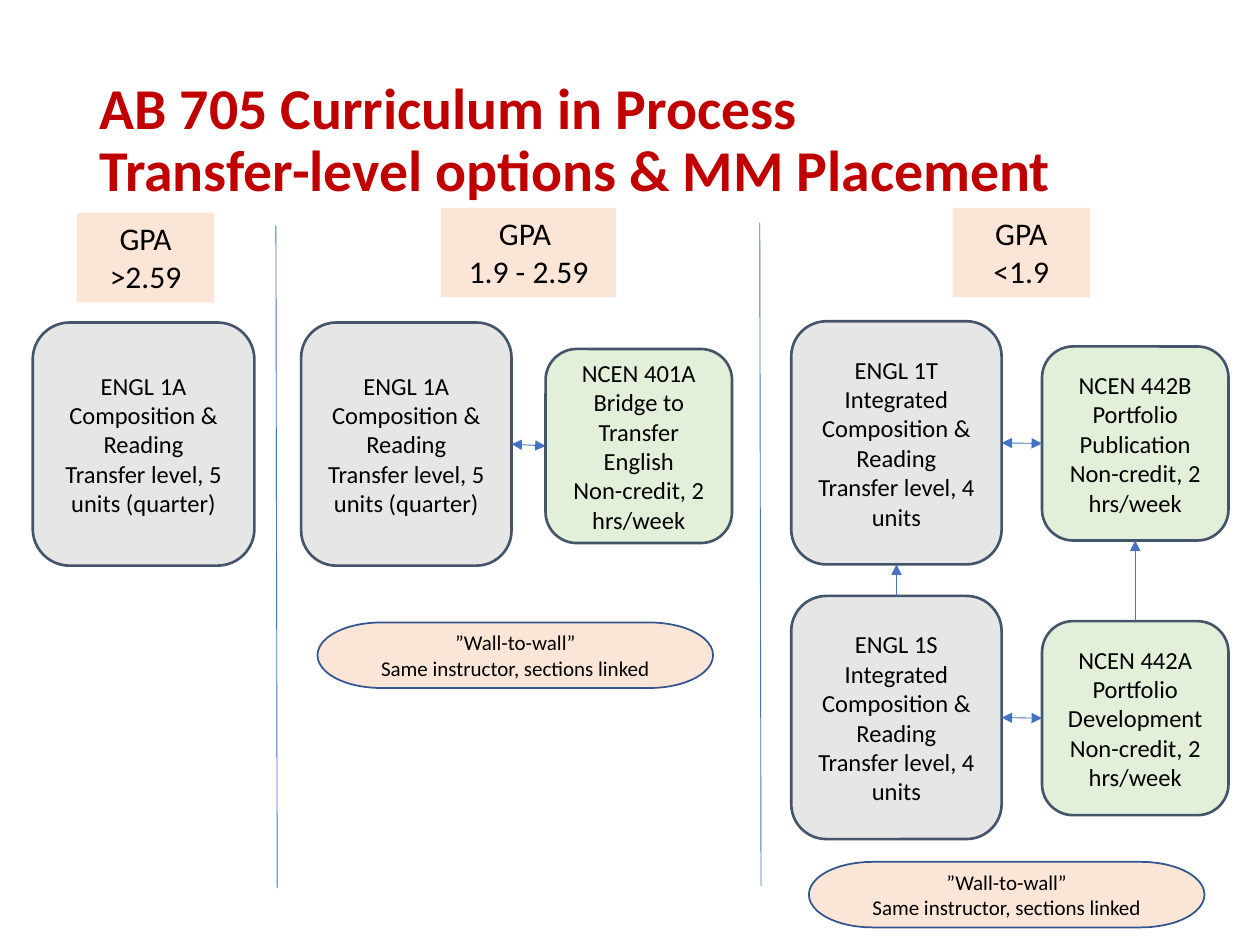
import dataclasses

import lxml.etree
import pptx
import pptx.dml.color
import pptx.enum.shapes
import pptx.enum.text
import pptx.oxml.ns
import pptx.util

EMU_PER_PX = 9144  # 100 px to the inch
FONT = "Calibri"
BLACK, RED, BLUE = "000000", "C00000", "4472C4"
GREY, GREEN, PEACH = "E7E6E6", "E2F0D9", "FBE5D6"
CARD_LINE, NOTE_LINE = "44546A", "325491"
TOP, LEFT, BOTTOM, RIGHT = range(4)  # connection sites of a card

SHAPES = pptx.enum.shapes.MSO_SHAPE
ALIGN = pptx.enum.text.PP_ALIGN
ANCHOR = pptx.enum.text.MSO_ANCHOR


@dataclasses.dataclass
class Box:
    left: int
    top: int
    width: int
    height: int
    lines: list[str]


@dataclasses.dataclass
class Style:
    preset: int
    fill: str
    size: int
    line: str | None = None
    line_width: float = 0
    anchor: int = ANCHOR.MIDDLE
    vertical_inset: int = 5


@dataclasses.dataclass
class Arrow:
    start: str
    start_site: int
    end: str
    end_site: int
    both_ways: bool


CREDIT = Style(SHAPES.ROUNDED_RECTANGLE, GREY, 14, CARD_LINE, 1.5, vertical_inset=10)
NON_CREDIT = dataclasses.replace(CREDIT, fill=GREEN)
GPA = Style(SHAPES.RECTANGLE, PEACH, 18, anchor=ANCHOR.TOP)
NOTE = Style(SHAPES.FLOWCHART_TERMINATOR, PEACH, 12, NOTE_LINE, 1)

TITLE_LINES = ["AB 705 Curriculum in Process", "Transfer-level options & MM Placement"]
COMPOSITION = ["ENGL 1A", "Composition & Reading", "Transfer level, 5 units (quarter)"]
INTEGRATED = ["Integrated Composition & Reading", "Transfer level, 4 units"]
HOURS = "Non-credit, 2 hrs/week"
WALL_TO_WALL = ["”Wall-to-wall”", "Same instructor, sections linked"]

DIVIDERS = [(219, 179, 220, 705), (603, 177, 604, 703)]

CARDS = {
    "1A high": (CREDIT, Box(26, 256, 176, 193, COMPOSITION)),
    "1A middle": (CREDIT, Box(239, 256, 167, 193, COMPOSITION)),
    "401A": (NON_CREDIT, Box(433, 277, 148, 154,
                             ["NCEN 401A", "Bridge to Transfer English", HOURS])),
    "1T": (CREDIT, Box(628, 255, 167, 193, ["ENGL 1T", *INTEGRATED])),
    "442B": (NON_CREDIT, Box(827, 275, 148, 154,
                             ["NCEN 442B", "Portfolio Publication", HOURS])),
    "1S": (CREDIT, Box(628, 473, 167, 193, ["ENGL 1S", *INTEGRATED])),
    "442A": (NON_CREDIT, Box(827, 493, 148, 154,
                             ["NCEN 442A", "Portfolio Development", HOURS])),
}

ARROWS = [
    Arrow("1A middle", RIGHT, "401A", LEFT, True),
    Arrow("1T", RIGHT, "442B", LEFT, True),
    Arrow("1S", RIGHT, "442A", LEFT, True),
    Arrow("1S", TOP, "1T", BOTTOM, False),
    Arrow("442A", TOP, "442B", BOTTOM, False),
]

GPA_LABELS = [
    Box(61, 169, 109, 71, ["GPA >2.59"]),
    Box(350, 165, 139, 71, ["GPA ", "1.9 - 2.59"]),
    Box(756, 165, 109, 71, ["GPA <1.9"]),
]

NOTES = [Box(252, 494, 314, 52, WALL_TO_WALL), Box(642, 684, 314, 52, WALL_TO_WALL)]


def px(length: int) -> pptx.util.Emu:
    return pptx.util.Emu(length * EMU_PER_PX)


def color(value: str) -> pptx.dml.color.RGBColor:
    return pptx.dml.color.RGBColor.from_string(value)


def add_run(paragraph, text: str, size: int, text_color: str, bold: bool = False) -> None:
    run = paragraph.add_run()
    run.text = text
    run.font.name = FONT
    run.font.size = pptx.util.Pt(size)
    run.font.bold = bold
    run.font.color.rgb = color(text_color)


def write_title(slide) -> None:
    title = slide.shapes.title
    title.left, title.top, title.width, title.height = map(px, (69, 40, 862, 145))
    frame = title.text_frame
    frame.word_wrap = True
    frame.auto_size = pptx.enum.text.MSO_AUTO_SIZE.NONE
    frame.vertical_anchor = ANCHOR.MIDDLE
    paragraph = frame.paragraphs[0]
    paragraph.alignment = ALIGN.LEFT
    paragraph.line_spacing = 0.9
    for index, line in enumerate(TITLE_LINES):
        if index:
            paragraph.add_line_break()
        add_run(paragraph, line, 33, RED, bold=True)


def add_box(slide, box: Box, style: Style):
    shape = slide.shapes.add_shape(
        style.preset, px(box.left), px(box.top), px(box.width), px(box.height))
    shape.shadow.inherit = False
    shape.fill.solid()
    shape.fill.fore_color.rgb = color(style.fill)
    if style.line:
        shape.line.color.rgb = color(style.line)
        shape.line.width = pptx.util.Pt(style.line_width)
    else:
        shape.line.fill.background()
    frame = shape.text_frame
    frame.word_wrap = True
    frame.vertical_anchor = style.anchor
    frame.margin_left = frame.margin_right = px(10)
    frame.margin_top = frame.margin_bottom = px(style.vertical_inset)
    for index, line in enumerate(box.lines):
        paragraph = frame.add_paragraph() if index else frame.paragraphs[0]
        paragraph.alignment = ALIGN.CENTER
        add_run(paragraph, line, style.size, BLACK)
    return shape


def add_line(slide, start_x: int, start_y: int, end_x: int, end_y: int):
    connector = slide.shapes.add_connector(
        pptx.enum.shapes.MSO_CONNECTOR.STRAIGHT,
        px(start_x), px(start_y), px(end_x), px(end_y))
    connector.line.color.rgb = color(BLUE)
    connector.line.width = pptx.util.Pt(0.5)
    lxml.etree.SubElement(
        connector._element.spPr, pptx.oxml.ns.qn("a:effectLst"))
    return connector


def add_arrow(slide, arrow: Arrow, cards: dict) -> None:
    """Glue a line to two cards, with a triangle at its end or at both ends."""
    connector = add_line(slide, 0, 0, 0, 0)
    connector.begin_connect(cards[arrow.start], arrow.start_site)
    connector.end_connect(cards[arrow.end], arrow.end_site)
    line = connector.line._get_or_add_ln()
    for tag in ["a:headEnd", "a:tailEnd"] if arrow.both_ways else ["a:tailEnd"]:
        lxml.etree.SubElement(line, pptx.oxml.ns.qn(tag), type="triangle")


def main() -> None:
    presentation = pptx.Presentation()
    presentation.slide_width, presentation.slide_height = px(1000), px(750)
    slide = presentation.slides.add_slide(
        presentation.slide_layouts.get_by_name("Title Only"))
    write_title(slide)
    for divider in DIVIDERS:
        add_line(slide, *divider)
    cards = {name: add_box(slide, box, style) for name, (style, box) in CARDS.items()}
    for arrow in ARROWS:
        add_arrow(slide, arrow, cards)
    for label in GPA_LABELS:
        add_box(slide, label, GPA)
    for note in NOTES:
        add_box(slide, note, NOTE)
    presentation.save("out.pptx")


if __name__ == "__main__":
    main()
